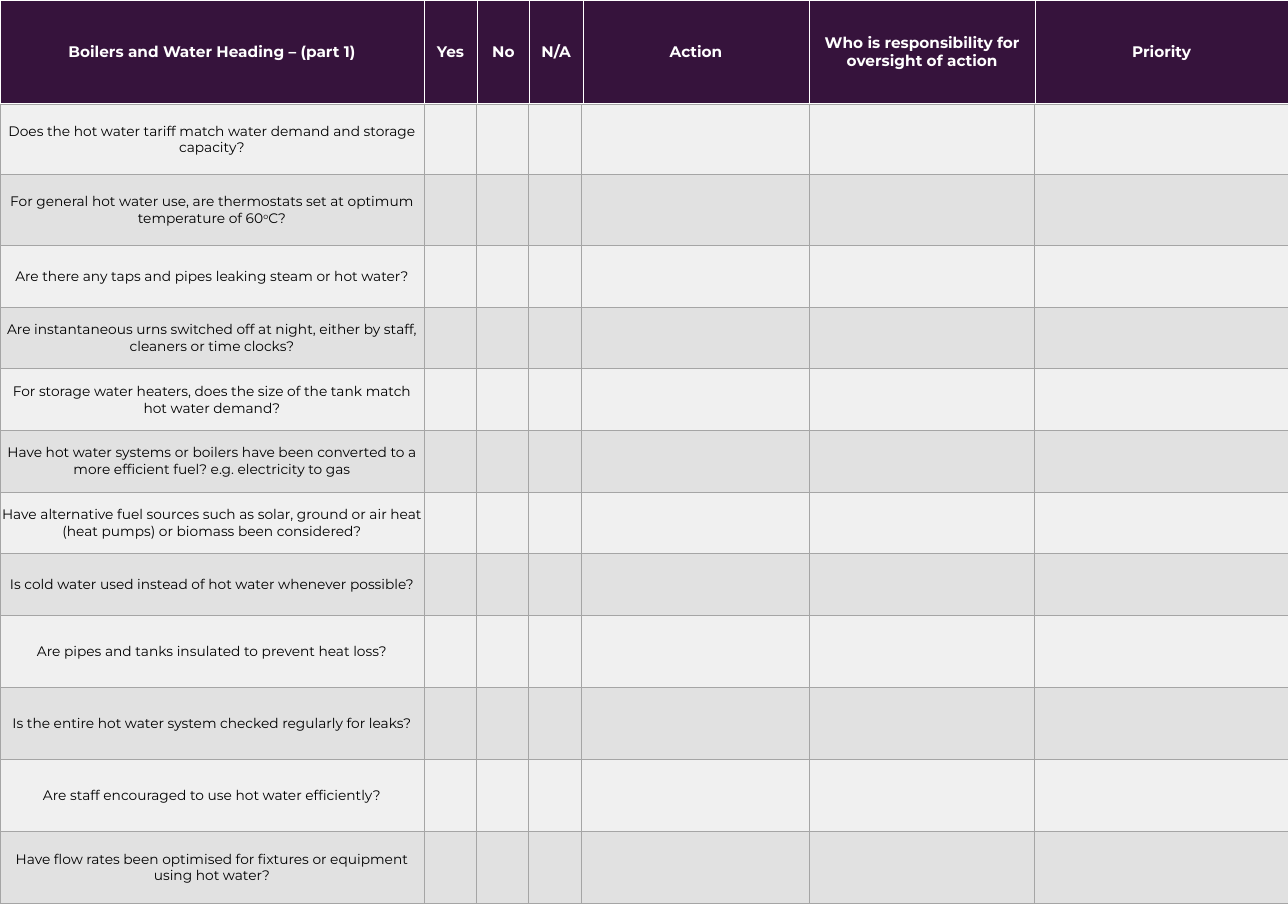
from pptx import Presentation
from pptx.dml.color import RGBColor
from pptx.enum.text import MSO_ANCHOR, PP_ALIGN
from pptx.oxml import parse_xml
from pptx.oxml.ns import nsdecls
from pptx.util import Inches, Pt

FONT = "Montserrat"
PURPLE = RGBColor(0x36, 0x13, 0x3C)
WHITE = RGBColor(0xFF, 0xFF, 0xFF)
BLACK = RGBColor(0x00, 0x00, 0x00)
GRID_GREY = RGBColor(0xA5, 0xA5, 0xA5)
BANDS = (RGBColor(0xF0, 0xF0, 0xF0), RGBColor(0xE1, 0xE1, 0xE1))

SLIDE_WIDTH, SLIDE_HEIGHT = 23.4, 16.5
HEADER_HEIGHT = 1.89
HEADER_WIDTHS = [7.7, 0.97, 0.95, 0.97, 4.11, 4.11, 4.59]
CHECKLIST_WIDTHS = [7.7, 0.95, 0.95, 0.97, 4.14, 4.08, 4.62]
CHECKLIST_HEIGHTS = [1.28, 1.29] + [1.12] * 6 + [1.31] * 4

HEADINGS = [
    "Boilers and Water Heading – (part 1)", "Yes", "No", "N/A", "Action",
    "Who is responsibility for oversight of action", "Priority",
]
# Each question is a list of runs; every second run is superscript.
QUESTIONS = [
    ["Does the hot water tariff match water demand and storage capacity?"],
    ["For general hot water use, are thermostats set at optimum temperature of 60", "o", "C?"],
    ["Are there any taps and pipes leaking steam or hot water?"],
    ["Are instantaneous urns switched off at night, either by staff, cleaners or time clocks?"],
    ["For storage water heaters, does the size of the tank match hot water demand?"],
    ["Have hot water systems or boilers have been converted to a more efficient fuel? "
     "e.g. electricity to gas"],
    ["Have alternative fuel sources such as solar, ground or air heat (heat pumps) "
     "or biomass been considered?"],
    ["Is cold water used instead of hot water whenever possible?"],
    ["Are pipes and tanks insulated to prevent heat loss?"],
    ["Is the entire hot water system checked regularly for leaks?"],
    ["Are staff encouraged to use hot water efficiently?"],
    ["Have flow rates been optimised for fixtures or equipment using hot water?"],
]


def add_plain_table(slide, left, top, widths, heights):
    table = slide.shapes.add_table(
        len(heights), len(widths), Inches(left), Inches(top),
        Inches(sum(widths)), Inches(sum(heights))).table
    table.first_row = table.horz_banding = False
    for column, width in zip(table.columns, widths):
        column.width = Inches(width)
    for row, height in zip(table.rows, heights):
        row.height = Inches(height)
    return table


def style_cell(cell, fill, border, bottom_width=1):
    cell.fill.solid()
    cell.fill.fore_color.rgb = fill
    cell.vertical_anchor = MSO_ANCHOR.MIDDLE
    properties = cell._tc.get_or_add_tcPr()
    for position, side in enumerate("LRTB"):
        width = Pt(bottom_width if side == "B" else 1)
        properties.insert(position, parse_xml(
            f'<a:ln{side} {nsdecls("a")} w="{width}"><a:solidFill>'
            f'<a:srgbClr val="{border}"/></a:solidFill></a:ln{side}>'))


def write_cell(cell, texts, size, color, bold=False):
    paragraph = cell.text_frame.paragraphs[0]
    paragraph.alignment = PP_ALIGN.CENTER
    for index, text in enumerate(texts):
        run = paragraph.add_run()
        run.text = text
        run.font.name = FONT
        run.font.size = Pt(size)
        run.font.bold = bold
        run.font.color.rgb = color
        if index % 2:
            run._r.get_or_add_rPr().set("baseline", "30000")


def add_header(slide, left, top):
    header = add_plain_table(slide, left, top, HEADER_WIDTHS, [HEADER_HEIGHT])
    for cell, heading in zip(header.iter_cells(), HEADINGS):
        style_cell(cell, PURPLE, WHITE, bottom_width=3)
        write_cell(cell, [heading], 20, WHITE, bold=True)


def add_checklist(slide, left, top):
    checklist = add_plain_table(slide, left, top, CHECKLIST_WIDTHS, CHECKLIST_HEIGHTS)
    for index, (row, question) in enumerate(zip(checklist.rows, QUESTIONS)):
        for cell in row.cells:
            style_cell(cell, BANDS[index % 2], GRID_GREY)
        question_cell = row.cells[0]
        question_cell.margin_left = question_cell.margin_right = Inches(0.01)
        question_cell.margin_top = Inches(0.01)
        question_cell.margin_bottom = 0
        write_cell(question_cell, question, 18, BLACK)


def main():
    presentation = Presentation()
    presentation.slide_width = Inches(SLIDE_WIDTH)
    presentation.slide_height = Inches(SLIDE_HEIGHT)
    slide = presentation.slides.add_slide(presentation.slide_layouts[6])
    add_header(slide, 0, 0)
    add_checklist(slide, 0, HEADER_HEIGHT)
    presentation.save("out.pptx")


if __name__ == "__main__":
    main()
